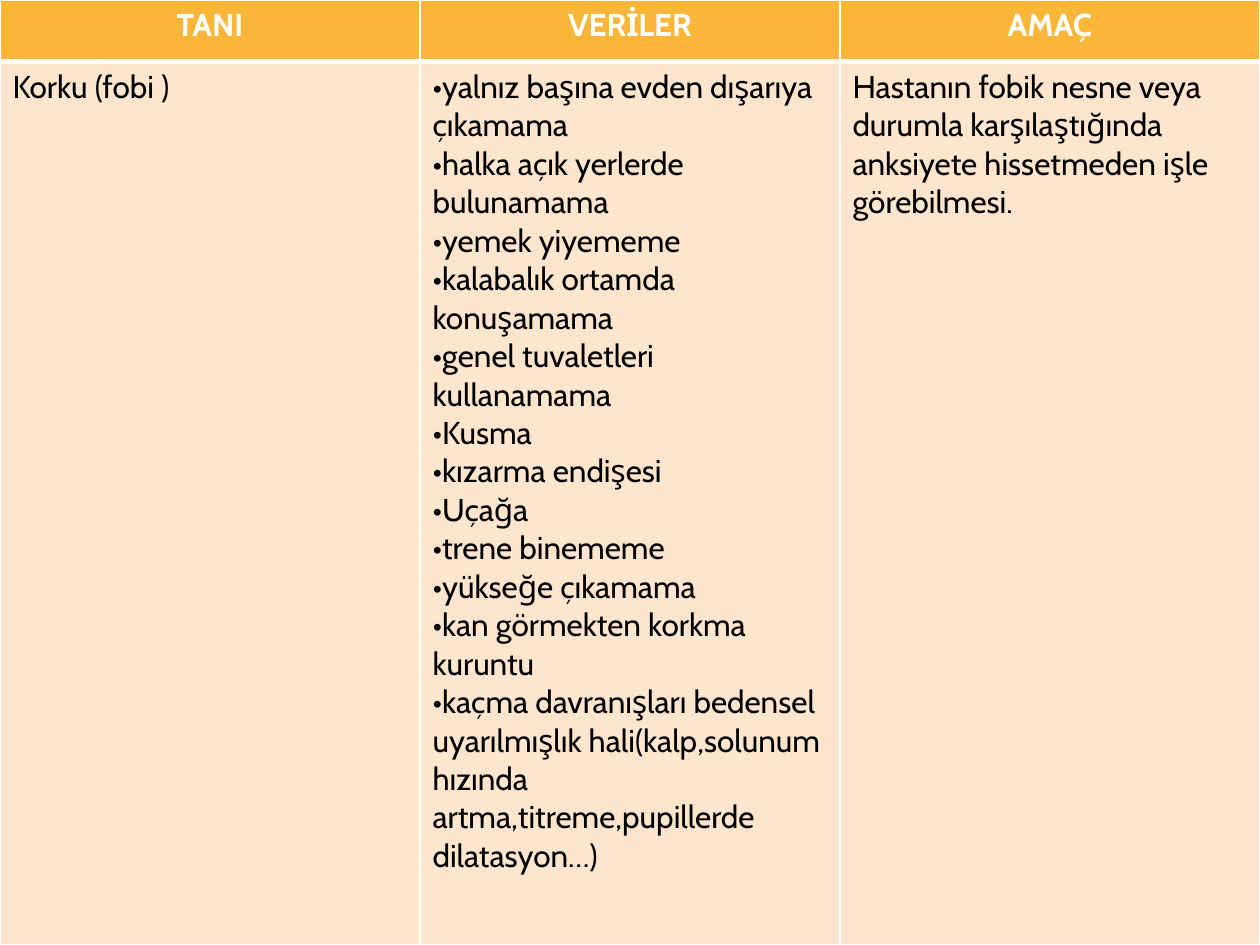
from lxml.etree import SubElement
from pptx import Presentation
from pptx.dml.color import RGBColor
from pptx.enum.text import PP_ALIGN as Align
from pptx.oxml.ns import qn
from pptx.util import Inches, Pt

# Content: each cell is a list of paragraphs
HEADINGS = ["TANI", "VERİLER", "AMAÇ"]
DIAGNOSIS = ["Korku (fobi )"]
FINDINGS = [
    "yalnız başına evden dışarıya çıkamama",
    "halka açık yerlerde bulunamama",
    "yemek yiyememe",
    "kalabalık ortamda konuşamama",
    "genel tuvaletleri kullanamama",
    "Kusma",
    "kızarma endişesi",
    "Uçağa",
    "trene binememe",
    "yükseğe çıkamama",
    "kan görmekten korkma kuruntu",
    "kaçma davranışları bedensel uyarılmışlık hali(kalp,solunum hızında "
    "artma,titreme,pupillerde dilatasyon…)",
]
GOAL = ["Hastanın fobik nesne veya durumla karşılaştığında anksiyete "
        "hissetmeden işle görebilmesi."]
ROWS = [[[heading] for heading in HEADINGS], [DIAGNOSIS, FINDINGS, GOAL]]

# Format of the header row and the body row; borders in points
STYLES = [
    {"fill": "F9B639", "color": "FFFFFF", "bold": True, "align": Align.CENTER,
     "borders": {"lnL": 1, "lnR": 1, "lnT": 1, "lnB": 3}},
    {"fill": "FDE5CE", "color": "000000", "bold": False, "align": Align.LEFT,
     "borders": {"lnL": 1, "lnR": 1, "lnT": 3, "lnB": 1}},
]
FONT = "Cabin"
WIDTH, HEIGHT, HEADER_HEIGHT = 10, 7.5, 0.49


def rgb(value):
    return RGBColor.from_string(value)


def add_borders(cell, borders):
    properties = cell._tc.get_or_add_tcPr()
    for side, points in borders.items():
        line = SubElement(properties, qn(f"a:{side}"), w=str(Pt(points)))
        fill = SubElement(line, qn("a:solidFill"))
        SubElement(fill, qn("a:srgbClr"), val="FFFFFF")


def add_bullet(para):
    properties = para._p.get_or_add_pPr()
    SubElement(properties, qn("a:buFont"), typeface=FONT)
    SubElement(properties, qn("a:buChar"), char="•")


def write_cell(cell, lines, style):
    add_borders(cell, style["borders"])
    cell.fill.solid()
    cell.fill.fore_color.rgb = rgb(style["fill"])
    frame = cell.text_frame
    for index, line in enumerate(lines):
        para = frame.add_paragraph() if index else frame.paragraphs[0]
        para.alignment = style["align"]
        if lines is FINDINGS:
            add_bullet(para)
        span = para.add_run()
        span.text = line
        for name, value in {"name": FONT, "size": Pt(18),
                            "bold": style["bold"]}.items():
            setattr(span.font, name, value)
        span.font.color.rgb = rgb(style["color"])


deck = Presentation()
deck.slide_width, deck.slide_height = Inches(WIDTH), Inches(HEIGHT)
page = deck.slides.add_slide(deck.slide_layouts[6])

# Table over the full page, with equal columns
table = page.shapes.add_table(len(ROWS), len(HEADINGS), 0, 0,
                              Inches(WIDTH), Inches(HEIGHT)).table
table.rows[0].height = Inches(HEADER_HEIGHT)
table.rows[1].height = Inches(HEIGHT - HEADER_HEIGHT)
for row, contents, style in zip(table.rows, ROWS, STYLES):
    for cell, lines in zip(row.cells, contents):
        write_cell(cell, lines, style)

deck.save("out.pptx")
